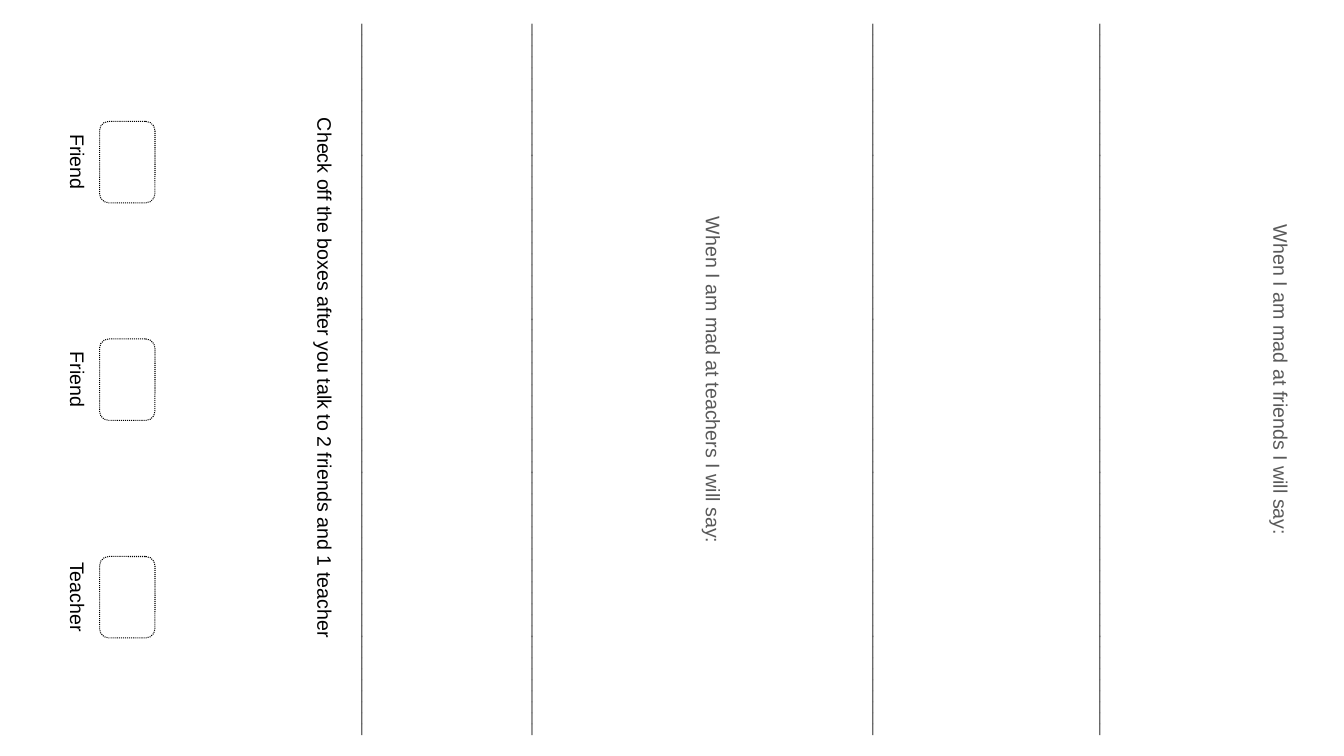
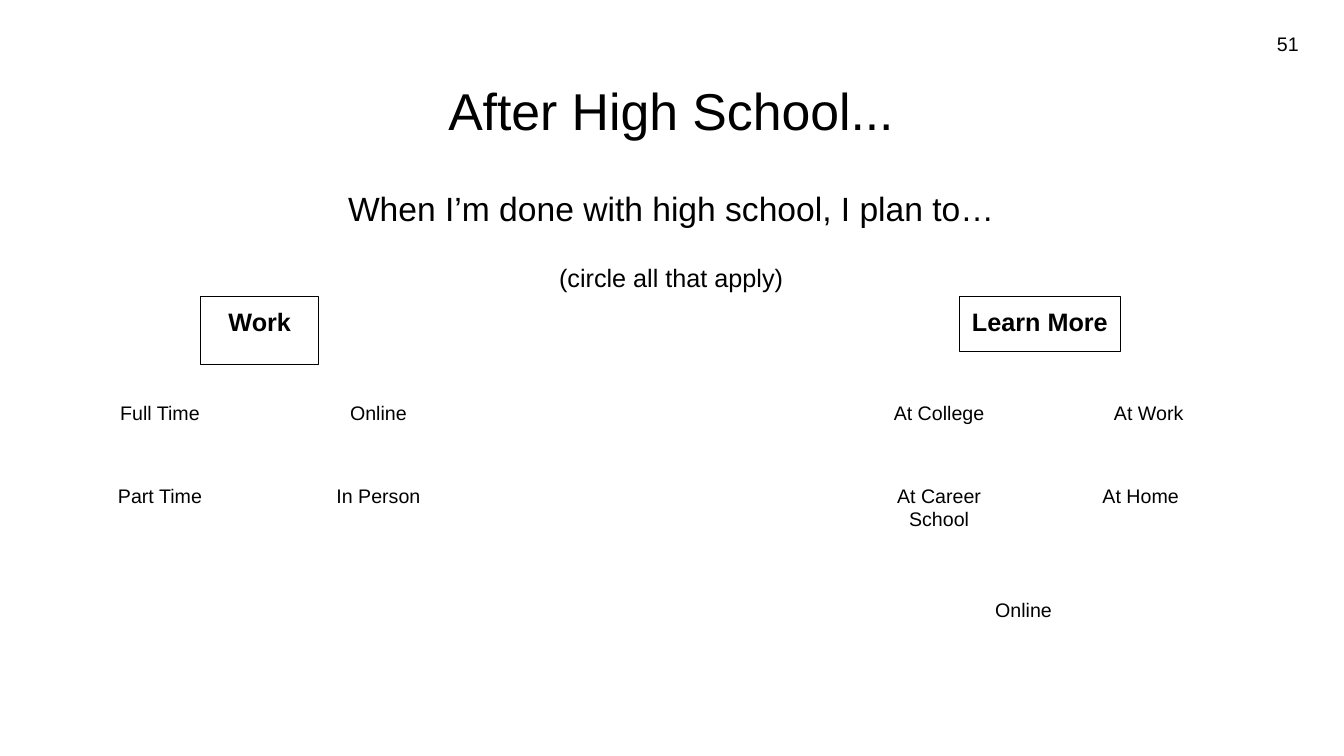
from pptx import Presentation
from pptx.dml.color import RGBColor
from pptx.enum.dml import MSO_LINE
from pptx.enum.shapes import MSO_SHAPE
from pptx.enum.text import MSO_ANCHOR, PP_ALIGN
from pptx.util import Inches, Pt

RECT = MSO_SHAPE.RECTANGLE
ROUND = MSO_SHAPE.ROUNDED_RECTANGLE
DOT = MSO_LINE.ROUND_DOT
TOP = MSO_ANCHOR.TOP
CENTER = PP_ALIGN.CENTER

COLORS = {"ink": "000000", "gray": "595959", "paper": "FFFFFF"}
FORMATS = {
    "title": {"size": Pt(37), "color": "ink"},
    "lead": {"size": Pt(24), "color": "ink"},
    "hint": {"size": Pt(18), "color": "ink"},
    "heading": {"size": Pt(18), "bold": True, "color": "ink"},
    "label": {"size": Pt(14), "color": "ink"},
    "prompt": {"size": Pt(14), "color": "gray"},
}

prs = Presentation()
prs.slide_width, prs.slide_height = Inches(13.333), Inches(7.5)
COL = prs.slide_width / 32
ROW = prs.slide_height / 18
BLANK = prs.slide_layouts[6]


def add_box(s, col, row, cols, rows, shape=None, rotation=0):
    at = [round(v) for v in (col * COL, row * ROW, cols * COL, rows * ROW)]
    if shape is None:
        sp = s.shapes.add_textbox(*at)
    else:
        sp = s.shapes.add_shape(shape, *at)
        sp.shadow.inherit = False
        sp.fill.solid()
        sp.fill.fore_color.rgb = RGBColor.from_string(COLORS["paper"])
        sp.line.color.rgb = RGBColor.from_string(COLORS["ink"])
        sp.line.width = Pt(0.75)
    sp.rotation = rotation
    return sp


def write(sp, lines, inset=0.1, spacing=None):
    tf = sp.text_frame
    tf.word_wrap = True
    tf.vertical_anchor = TOP
    for side in ("left", "right", "top", "bottom"):
        setattr(tf, f"margin_{side}", Inches(inset))
    for i, (text, style, before) in enumerate(lines):
        p = tf.add_paragraph() if i else tf.paragraphs[0]
        p.alignment = CENTER
        p.space_before = Pt(before)
        if spacing:
            p.line_spacing = spacing
        r = p.add_run()
        r.text = text
        r.font.name = "Arial"
        for name, value in FORMATS[style].items():
            if name == "color":
                r.font.color.rgb = RGBColor.from_string(COLORS[value])
            else:
                setattr(r.font, name, value)


s = prs.slides.add_slide(BLANK)
RULE = "_" * 65
PITCH = 40.3
LINE = 18.5
prompts = [
    ("When I am mad at friends I will say:", 0),
    (RULE, 3),
    (RULE, 4),
    ("When I am mad at teachers I will say:", 3),
    (RULE, 3),
    (RULE, 3),
]
write(
    add_box(s, 9.65, -3.6, 17.76, 25.3, rotation=90),
    [(text, "prompt", max(0, steps * PITCH - LINE)) for text, steps in prompts],
    inset=0.13,
    spacing=1.15,
)
write(
    add_box(s, -0.72, 8.42, 16.82, 1.15, rotation=90),
    [("Check off the boxes after you talk to 2 friends and 1 teacher", "label", 0)],
)
for i, person in enumerate(["Friend", "Friend", "Teacher"]):
    row = 3.2 + i * 5.18
    sp = add_box(s, 2.06, row, 1.94, 1.32, ROUND, 90)
    sp.line.dash_style = DOT
    write(add_box(s, 0.65, row + 0.2, 2.54, 0.91, rotation=90), [(person, "label", 0)])

s = prs.slides.add_slide(BLANK)
write(add_box(s, 1.08, 1.56, 29.8, 2), [("After High School...", "title", 0)], inset=0.13)
write(
    add_box(s, 1.08, 4.03, 29.8, 2.71),
    [
        ("When I’m done with high school, I plan to…", "lead", 0),
        ("(circle all that apply)", "hint", 21),
    ],
    inset=0.13,
    spacing=1.15,
)
for text, col, cols, rows in [("Work", 4.78, 2.81, 1.61), ("Learn More", 22.85, 3.82, 1.32)]:
    sp = add_box(s, col, 7.06, cols, rows, RECT)
    sp.fill.background()
    write(sp, [(text, "heading", 0)])

OPTION_ROWS = [9.31, 11.28, 13.99]
options = [
    ("Full Time", 1.9, 0),
    ("Part Time", 1.9, 1),
    ("Online", 7.1, 0),
    ("In Person", 7.1, 1),
    ("At College", 20.45, 0),
    ("At Career School", 20.45, 1),
    ("At Work", 25.44, 0),
    ("At Home", 25.25, 1),
    ("Online", 22.46, 2),
]
for text, col, i in options:
    write(add_box(s, col, OPTION_ROWS[i], 3.82, 1.61), [(text, "label", 0)])
write(add_box(s, 29.98, 0.53, 1.37, 0.96), [("51", "label", 0)])

prs.save("out.pptx")
